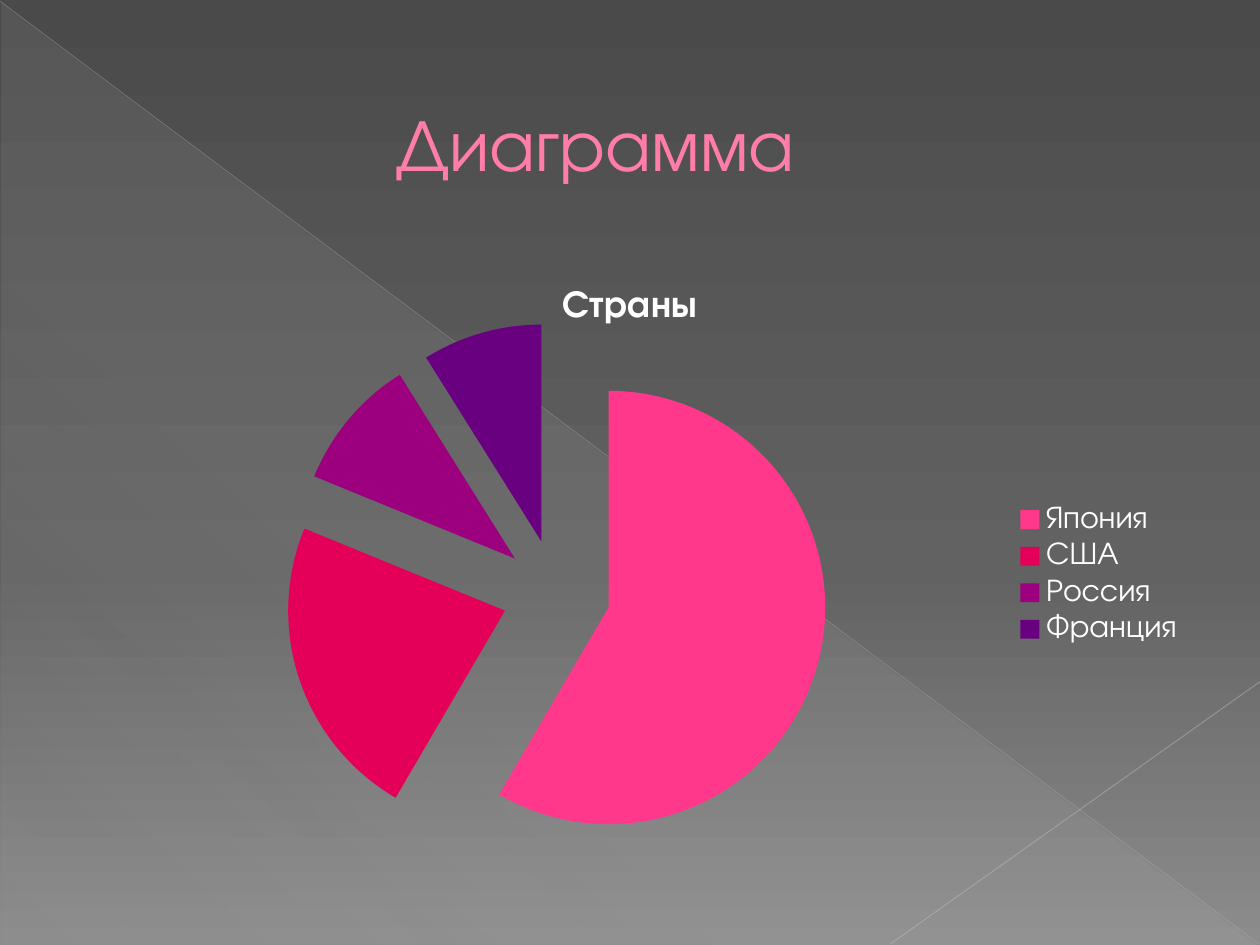
from lxml import etree
from pptx import Presentation
from pptx.chart.data import CategoryChartData
from pptx.dml.color import RGBColor
from pptx.enum.chart import XL_CHART_TYPE, XL_LEGEND_POSITION
from pptx.enum.shapes import MSO_CONNECTOR, MSO_SHAPE
from pptx.enum.text import MSO_ANCHOR, PP_ALIGN
from pptx.oxml.ns import qn
from pptx.util import Inches, Pt

PIE = XL_CHART_TYPE.PIE
RIGHT = XL_LEGEND_POSITION.RIGHT
LINE = MSO_CONNECTOR.STRAIGHT
WEDGE = MSO_SHAPE.RIGHT_TRIANGLE
BOTTOM = MSO_ANCHOR.BOTTOM
LEFT = PP_ALIGN.LEFT
FONT = "TeX Gyre Adventor"


def paint(color, value):
    color.rgb = RGBColor.from_string(value)


def shade(fill, root, angle, stops):
    fill.gradient()
    grad = next(root.iter(qn("a:gradFill")))
    grad.find(qn("a:lin")).set("ang", str(angle * 60000))
    items = grad.find(qn("a:gsLst"))
    for old in list(items):
        items.remove(old)
    for pos, value, alpha in stops:
        stop = etree.SubElement(items, qn("a:gs"), pos=str(pos * 1000))
        color = etree.SubElement(stop, qn("a:srgbClr"), val=value)
        etree.SubElement(color, qn("a:alpha"), val=str(alpha * 1000))


deck = Presentation()
deck.slide_width, deck.slide_height = Inches(10), Inches(7.5)
slide = deck.slides.add_slide(deck.slide_layouts[5])
shade(slide.background.fill, slide.element, 90,
      [(0, "4A4A4A", 100), (60, "626262", 100), (100, "8C8C8C", 100)])

wedge = slide.shapes.add_shape(
    WEDGE, Inches(0.01), Inches(0.02), Inches(9.98), Inches(7.48))
wedge.shadow.inherit = False
wedge.line.fill.background()
shade(wedge.fill, wedge.element, 133,
      [(0, "D2D2D2", 10), (70, "D2D2D2", 8), (100, "D2D2D2", 1)])

for ends, value, width, alpha in [
    ((0, 0.01, 9.99, 7.49), "BFBFBF", 0.39, 35),
    ((10, 5.41, 7.07, 7.49), "C6C6C6", 0.47, 45),
]:
    line = slide.shapes.add_connector(LINE, *[Inches(n) for n in ends])
    line.line.width = Pt(width)
    paint(line.line.color, value)
    color = next(line.element.spPr.iter(qn("a:srgbClr")))
    etree.SubElement(color, qn("a:alpha"), val=str(alpha * 1000))
    etree.SubElement(line.element.spPr, qn("a:effectLst"))

title = slide.shapes.title
title.left, title.top = Inches(0.59), Inches(0)
title.width, title.height = Inches(9), Inches(1.53)
frame = title.text_frame
frame.text = "Диаграмма"
frame.vertical_anchor = BOTTOM
frame.margin_left = Inches(2.56)
para = frame.paragraphs[0]
para.alignment = LEFT
para.font.name, para.font.size = FONT, Pt(42)
paint(para.font.color, "FF7DA7")

data = CategoryChartData()
data.categories = ["Япония", "США", "Россия ", "Франция"]
data.add_series("Series 1", [59, 23, 10, 9])
chart = slide.shapes.add_chart(
    PIE, Inches(0.5), Inches(2.06), Inches(9), Inches(5), data).chart
chart.font.name, chart.font.size = FONT, Pt(18)
paint(chart.font.color, "FFFFFF")

chart.has_title = True
chart.chart_title.text_frame.text = "Страны"
head = chart.chart_title.text_frame.paragraphs[0].font
head.name, head.size, head.bold = FONT, Pt(21.6), True
paint(head.color, "FFFFFF")

chart.has_legend = True
chart.legend.position = RIGHT
chart.legend.include_in_layout = False

pie = chart.plots[0].series[0]
for i, value in enumerate(["FF388C", "E40059", "9C007F", "68007F"]):
    fill = pie.points[i].format.fill
    fill.solid()
    paint(fill.fore_color, value)
burst = etree.Element(qn("c:explosion"), val="25")
next(pie.points[0].format.fill and chart.element.iter(qn("c:dPt"))).addprevious(burst)

area = next(chart.element.iter(qn("c:plotArea")))
for old in area.findall(qn("c:layout")):
    area.remove(old)
layout = etree.Element(qn("c:layout"))
area.insert(0, layout)
manual = etree.SubElement(layout, qn("c:manualLayout"))
for tag, value in [
    ("layoutTarget", "inner"), ("xMode", "edge"), ("yMode", "edge"),
    ("x", "0.03"), ("y", "0.1"), ("w", "0.81"), ("h", "0.86"),
]:
    etree.SubElement(manual, qn("c:" + tag), val=value)

deck.save("out.pptx")
